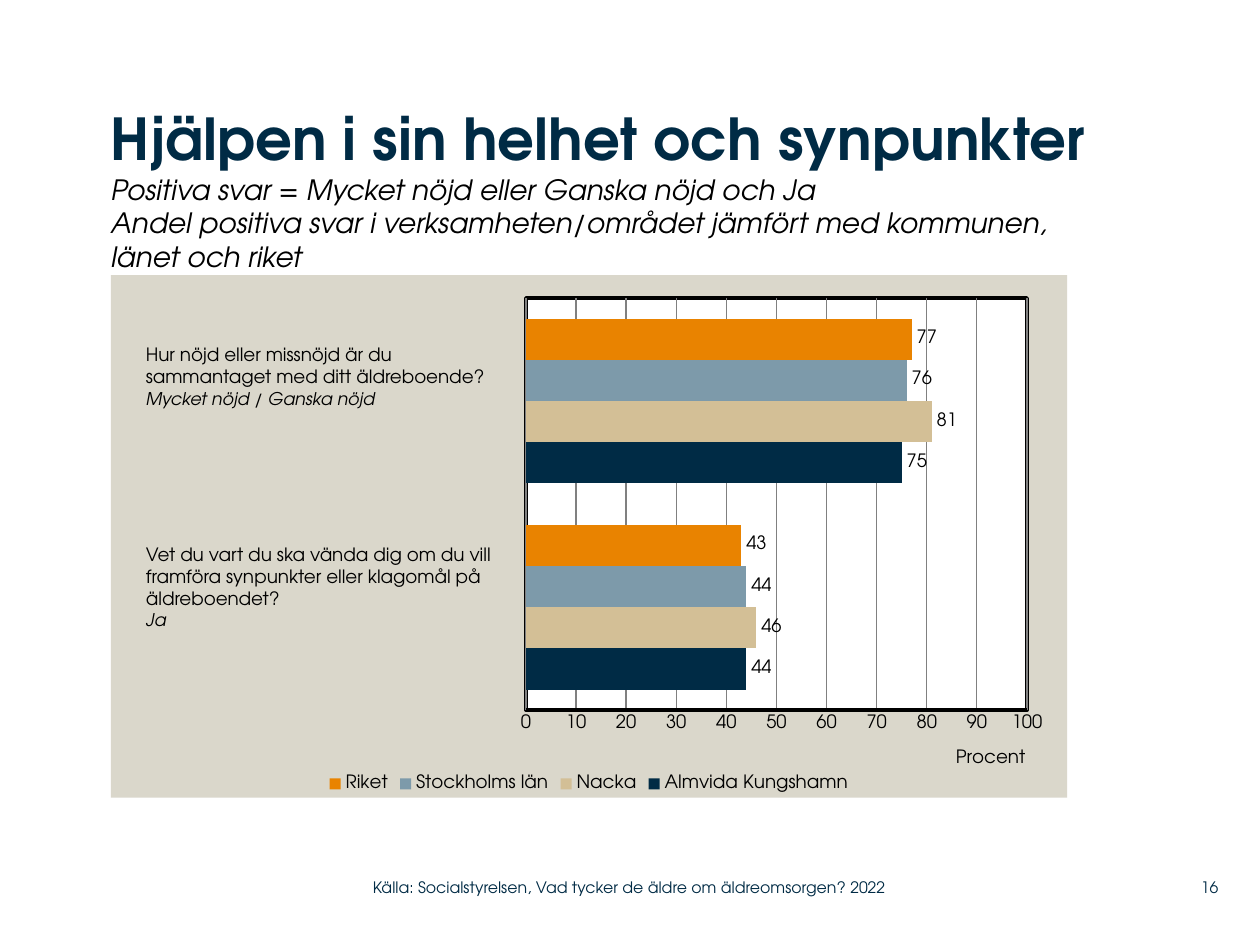
"""Build the slide on overall satisfaction and feedback in elderly care homes."""
from lxml.etree import SubElement
from pptx import Presentation
from pptx.chart.data import CategoryChartData
from pptx.dml.color import RGBColor as Rgb
from pptx.enum.chart import XL_CHART_TYPE as ChartType
from pptx.enum.chart import XL_LABEL_POSITION as LabelPos
from pptx.enum.chart import XL_LEGEND_POSITION as LegendPos
from pptx.enum.chart import XL_TICK_MARK as Tick
from pptx.enum.text import MSO_ANCHOR as Anchor
from pptx.enum.text import MSO_AUTO_SIZE as AutoSize
from pptx.enum.text import PP_ALIGN as Align
from pptx.oxml import parse_xml
from pptx.oxml.ns import nsdecls, qn
from pptx.util import Inches, Pt

THEME = {
    "font": "TeX Gyre Adventor",
    "navy": Rgb(0x00, 0x2B, 0x45),
    "black": Rgb(0, 0, 0),
    "grid": Rgb(0x80, 0x80, 0x80),
    "panel": "DAD7CB",
    "plot": "FFFFFF",
    "title": Pt(33),
    "subtitle": Pt(16),
    "body": Pt(10.5),
    "answer": Pt(10),
    "footer": Pt(9),
}
NO_INSETS = dict.fromkeys(("margin_left", "margin_top", "margin_right", "margin_bottom"), 0)


def add_run(paragraph, text, size, color="black", **style):
    run = paragraph.add_run()
    run.text = text
    run.font.color.rgb = THEME[color]
    for key, value in {"name": THEME["font"], "size": THEME[size], **style}.items():
        setattr(run.font, key, value)


def set_layout(parent, index, **values):
    for old in parent.findall(qn("c:layout")):
        parent.remove(old)
    layout = parse_xml(f"<c:layout {nsdecls('c')}/>")
    manual = SubElement(layout, qn("c:manualLayout"))
    for key, value in values.items():
        SubElement(manual, qn(f"c:{key}")).set("val", str(value))
    parent.insert(index, layout)


deck = Presentation()
deck.slide_width, deck.slide_height = Inches(10), Inches(7.5)
W, H = deck.slide_width, deck.slide_height
slide = deck.slides.add_slide(deck.slide_layouts[5])
LEFT, QUESTION_LEFT, FOOTER_TOP = int(W * 0.088), int(W * 0.106), int(H * 0.919)

heading = slide.shapes.title
for key, value in {"left": LEFT, "top": int(H * 0.11), "width": int(W * 0.779), "height": int(H * 0.179)}.items():
    setattr(heading, key, value)
for key, value in {**NO_INSETS, "word_wrap": True, "auto_size": AutoSize.NONE,
                   "vertical_anchor": Anchor.BOTTOM}.items():
    setattr(heading.text_frame, key, value)
headline = heading.text_frame.paragraphs[0]
headline.alignment = Align.LEFT
add_run(headline, "Hjälpen i sin helhet och synpunkter", "title", "navy", bold=True)
for subtitle in (
    "Positiva svar = Mycket nöjd eller Ganska nöjd och Ja",
    "Andel positiva svar i verksamheten/området jämfört med kommunen, länet och riket",
):
    headline.add_line_break()
    add_run(headline, subtitle, "subtitle", bold=False, italic=True)

SERIES = (
    ("Almvida Kungshamn", (44, 75), "002B45"),
    ("Nacka", (46, 81), "D3BF96"),
    ("Stockholms län", (44, 76), "7D9AAA"),
    ("Riket", (43, 77), "E98300"),
)
answers = CategoryChartData()
answers.categories = ["1", "2"]
for name, shares, _ in SERIES:
    answers.add_series(name, shares)
chart = slide.shapes.add_chart(
    ChartType.BAR_CLUSTERED, LEFT, int(H * 0.291), int(W * 0.759), int(H * 0.553), answers
).chart
chart.has_title = False
for key, value in {"name": THEME["font"], "size": THEME["body"], "bold": False}.items():
    setattr(chart.font, key, value)
chart.font.color.rgb = THEME["black"]
chart.has_legend = True
chart.legend.position = LegendPos.BOTTOM
chart.legend.include_in_layout = False

bars = chart.plots[0]
for key, value in {"gap_width": 100, "overlap": 0, "vary_by_categories": False,
                   "has_data_labels": True}.items():
    setattr(bars, key, value)
bars.data_labels.show_value = True
bars.data_labels.position = LabelPos.OUTSIDE_END
for series, (_, _, color) in zip(bars.series, SERIES):
    series.format.fill.solid()
    series.format.fill.fore_color.rgb = Rgb.from_string(color)

chart.category_axis.visible = False
percent = chart.value_axis
for key, value in {"minimum_scale": 0, "maximum_scale": 100, "major_unit": 10,
                   "major_tick_mark": Tick.NONE, "minor_tick_mark": Tick.NONE,
                   "has_major_gridlines": True}.items():
    setattr(percent, key, value)
for line, color, width in (
    (percent.format.line, "black", 2),
    (percent.major_gridlines.format.line, "grid", 0.75),
):
    line.color.rgb = THEME[color]
    line.width = Pt(width)
axis_title = percent.axis_title
add_run(axis_title.text_frame.paragraphs[0], "Procent", "body", bold=False)
title_xml = axis_title.format.line and percent._element.find(qn("c:title"))
set_layout(title_xml, 1, xMode="edge", yMode="edge", x=0.88, y=0.9)

chart_xml = chart._chartSpace.find(qn("c:chart"))
plot_area = chart_xml.find(qn("c:plotArea"))
set_layout(plot_area, 0, layoutTarget="inner", xMode="edge", yMode="edge",
           x=0.434, y=0.044, w=0.524, h=0.789)
for attach, fill, border in (
    (plot_area.append, THEME["plot"],
     '<a:ln w="25400"><a:solidFill><a:srgbClr val="000000"/></a:solidFill></a:ln>'),
    (chart_xml.addnext, THEME["panel"], "<a:ln><a:noFill/></a:ln>"),
):
    attach(parse_xml(
        f'<c:spPr {nsdecls("c", "a")}><a:solidFill><a:srgbClr val="{fill}"/></a:solidFill>{border}</c:spPr>'
    ))

QUESTIONS = (
    (0.357, 0.31, ("Hur nöjd eller missnöjd är du", "sammantaget med ditt äldreboende?"),
     "Mycket nöjd / Ganska nöjd"),
    (0.568, 0.305, ("Vet du vart du ska vända dig om du vill framföra synpunkter "
                    "eller klagomål på äldreboendet?",), "Ja"),
)
for top, width, question, answer in QUESTIONS:
    frame = slide.shapes.add_textbox(QUESTION_LEFT, int(H * top), int(W * width), int(H * 0.108)).text_frame
    frame.word_wrap = True
    frame.auto_size = AutoSize.SHAPE_TO_FIT_TEXT
    for index, sentence in enumerate(question):
        paragraph = frame.add_paragraph() if index else frame.paragraphs[0]
        add_run(paragraph, sentence, "body")
    add_run(frame.add_paragraph(), answer, "answer", italic=True)

for left, width, align, text in (
    (0.296, 0.443, Align.LEFT, "Källa: Socialstyrelsen, Vad tycker de äldre om äldreomsorgen? 2022"),
    (0.92, 0.047, Align.RIGHT, "16"),
):
    frame = slide.shapes.add_textbox(int(W * left), FOOTER_TOP, int(W * width), int(H * 0.039)).text_frame
    for key, value in {**NO_INSETS, "word_wrap": True, "vertical_anchor": Anchor.MIDDLE}.items():
        setattr(frame, key, value)
    frame.paragraphs[0].alignment = align
    add_run(frame.paragraphs[0], text, "footer", "navy")

deck.save("out.pptx")
